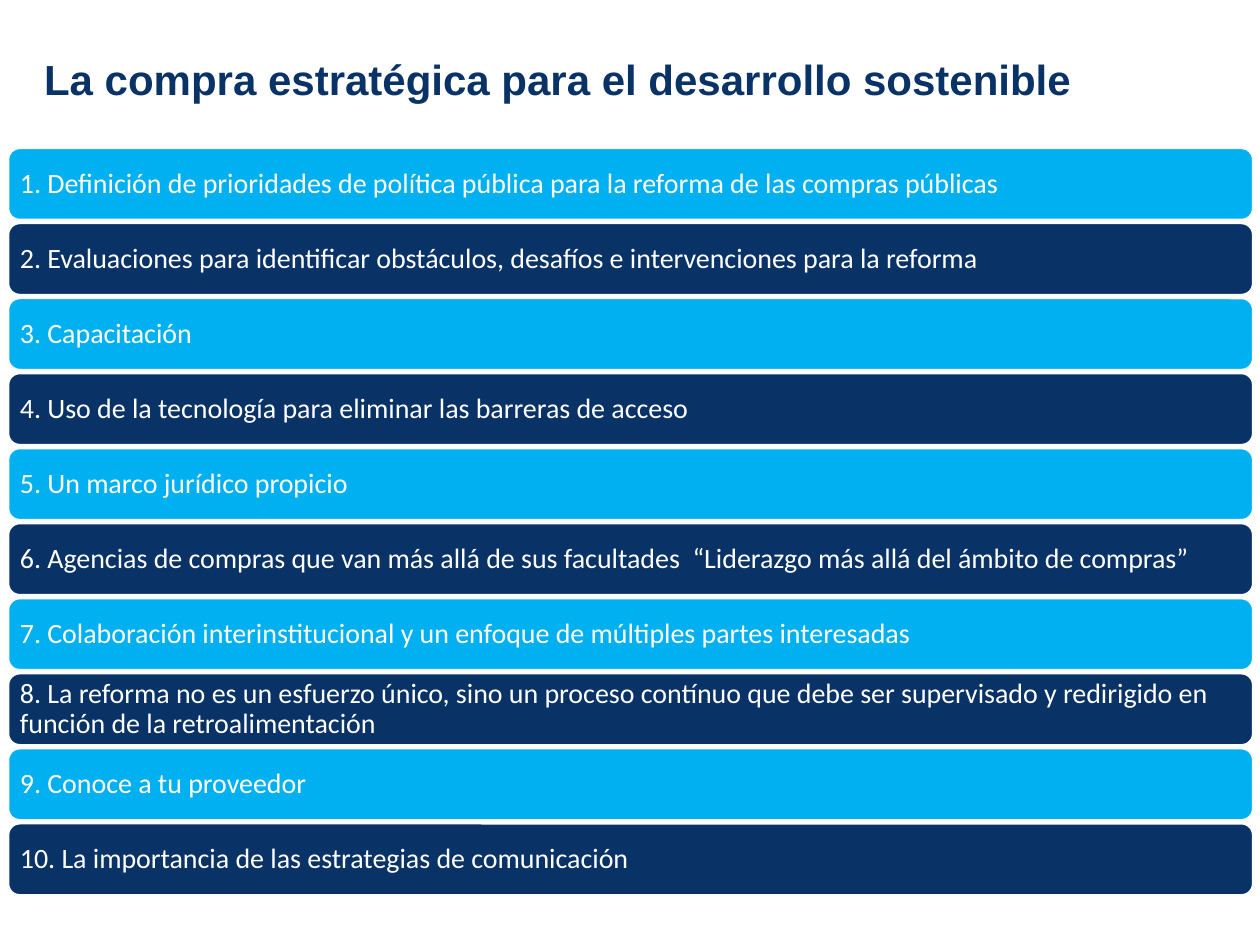
from pptx import Presentation
from pptx.dml.color import RGBColor
from pptx.enum.shapes import MSO_SHAPE
from pptx.enum.text import MSO_ANCHOR, PP_ALIGN
from pptx.util import Inches, Pt

NAVY = "093266"
SKY = "00B0F0"
WHITE = "FFFFFF"

LESSONS = [
    "Definición de prioridades de política pública para la reforma de las compras públicas",
    "Evaluaciones para identificar obstáculos, desafíos e intervenciones para la reforma",
    "Capacitación",
    "Uso de la tecnología para eliminar las barreras de acceso",
    "Un marco jurídico propicio",
    "Agencias de compras que van más allá de sus facultades  “Liderazgo más allá del ámbito de compras”",
    "Colaboración interinstitucional y un enfoque de múltiples partes interesadas",
    "La reforma no es un esfuerzo único, sino un proceso contínuo que debe ser supervisado "
    "y redirigido en función de la retroalimentación",
    "Conoce a tu proveedor",
    "La importancia de las estrategias de comunicación",
]
FIRST_TOP = 1.17
LAST_TOP = 6.53


def color(value):
    return RGBColor.from_string(value)


def write_text(frame, text, *, size, font, fill, bold=False, inset=None, spacing=None):
    frame.word_wrap = True
    frame.vertical_anchor = MSO_ANCHOR.MIDDLE
    if inset is not None:
        frame.margin_left = frame.margin_right = Inches(inset)
        frame.margin_top = frame.margin_bottom = Inches(inset)
    para = frame.paragraphs[0]
    para.alignment = PP_ALIGN.LEFT
    if spacing is not None:
        para.line_spacing = spacing
    span = para.add_run()
    span.text = text
    span.font.size = Pt(size)
    span.font.name = font
    span.font.bold = bold
    span.font.color.rgb = color(fill)


def add_title(slide, text):
    title = slide.shapes.title
    title.left, title.top = Inches(0.25), Inches(0)
    title.width, title.height = Inches(8.56), Inches(1.25)
    write_text(title.text_frame, text, size=24, font="Arial", fill=NAVY, bold=True)


def add_bar(slide, text, top, fill):
    bar = slide.shapes.add_shape(
        MSO_SHAPE.ROUNDED_RECTANGLE, Inches(0.06), Inches(top), Inches(9.89), Inches(0.58)
    )
    bar.shadow.inherit = False
    bar.fill.solid()
    bar.fill.fore_color.rgb = color(fill)
    bar.line.color.rgb = color(WHITE)
    bar.line.width = Pt(2)
    write_text(bar.text_frame, text, size=16, font="Calibri", fill=WHITE, inset=0.07, spacing=0.9)


def main():
    deck = Presentation()
    deck.slide_width, deck.slide_height = Inches(10), Inches(7.5)
    slide = deck.slides.add_slide(deck.slide_layouts[5])
    add_title(slide, "La compra estratégica para el desarrollo sostenible")
    pitch = (LAST_TOP - FIRST_TOP) / (len(LESSONS) - 1)
    for index, lesson in enumerate(LESSONS):
        fill = NAVY if index % 2 else SKY
        add_bar(slide, f"{index + 1}. {lesson}", FIRST_TOP + index * pitch, fill)
    deck.save("out.pptx")


if __name__ == "__main__":
    main()
